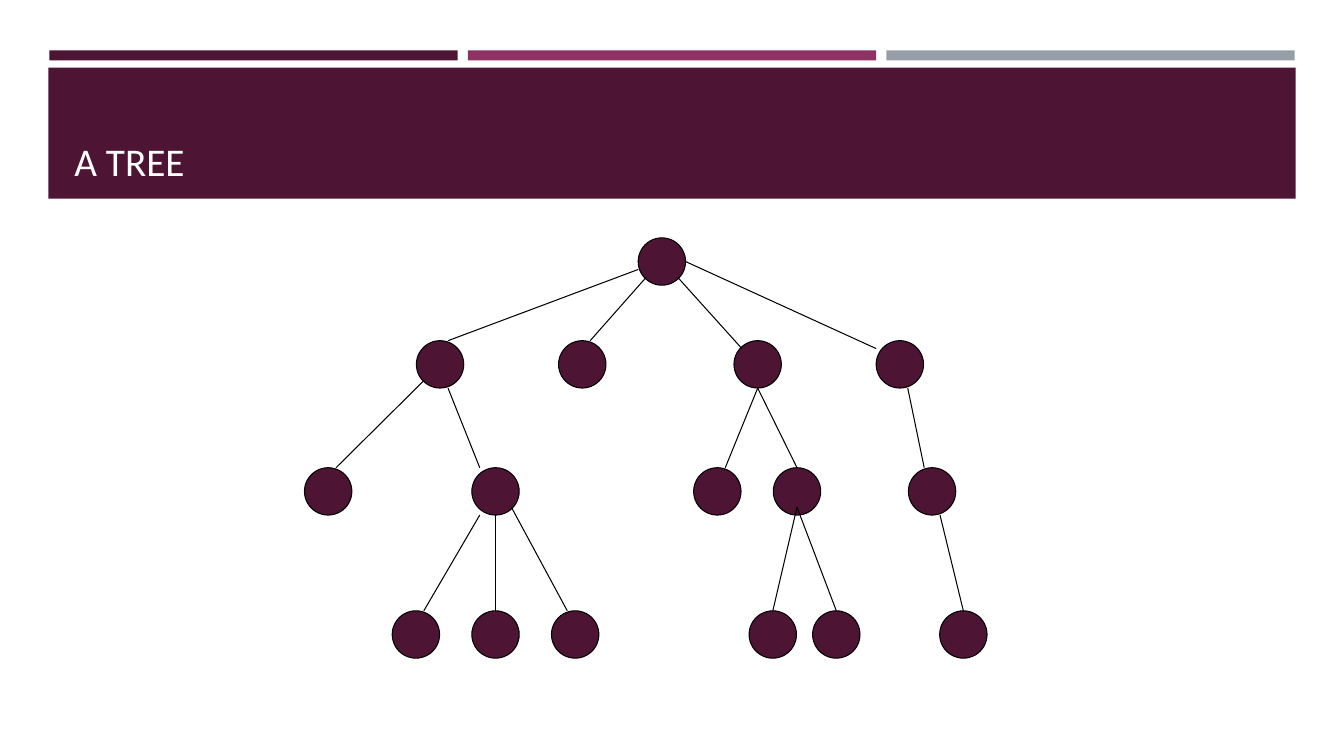
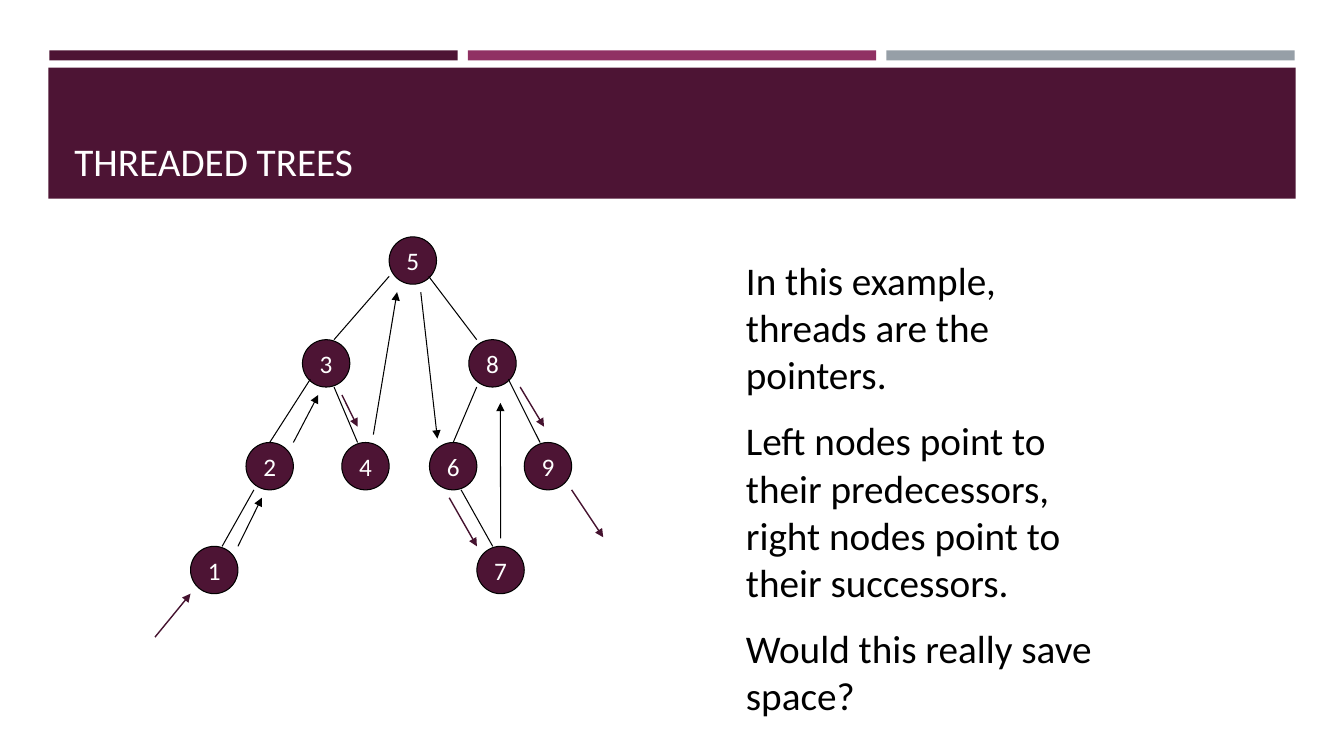
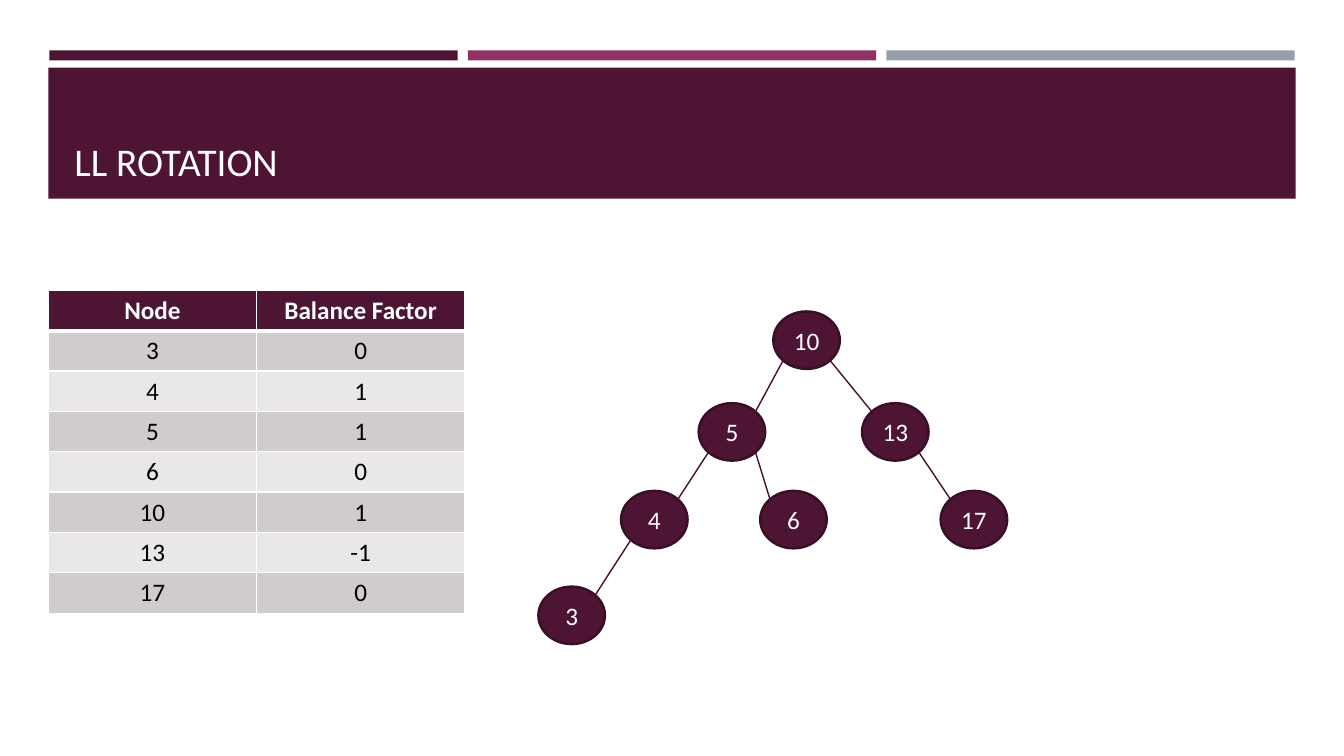
from lxml.etree import SubElement
from pptx import Presentation
from pptx.dml.color import RGBColor
from pptx.enum.shapes import MSO_CONNECTOR, MSO_SHAPE
from pptx.enum.text import MSO_ANCHOR, PP_ALIGN
from pptx.oxml.ns import qn
from pptx.util import Emu, Pt

PLUM, MAGENTA, GREY = "4D1434", "903163", "969FA7"
DARK_PLUM, DEEP_PLUM = "45122F", "390F26"
BLACK, WHITE = "000000", "FFFFFF"
ROW_FILLS = ("D0CCCE", "E9E7E8")
FONT = "Calibri"

EMU_PER_PX = 9144
NODE_UNITS = 6

THIN = {"color": BLACK, "width": 0.75}
THREAD = {"color": BLACK, "width": 0.75, "arrow": True}
POINTER = {"color": DARK_PLUM, "width": 1, "arrow": True}
BRANCH = {"color": DARK_PLUM, "width": 1}

UPPER_LEFT, UPPER_RIGHT = (0.88, 0.88), (5.12, 0.88)
LOWER_LEFT, LOWER_RIGHT = (0.88, 5.12), (5.12, 5.12)

PLAIN_TREE = {
    "box": (302, 236), "node_size": (47, 47), "outline": (BLACK, 0.75), "labelled": False,
    "nodes": {
        "root": (331, 0),
        "A": (111, 102), "B": (252, 102), "C": (426, 102), "D": (567, 102),
        "E": (0, 228), "F": (166, 228), "G": (386, 228), "H": (465, 228), "I": (599, 228),
        "J": (87, 370), "K": (166, 370), "L": (245, 370),
        "M": (441, 370), "N": (504, 370), "O": (630, 370),
    },
    "edges": [(THIN, [
        ("root", (0, 4), "A", (4, 0)), ("root", (1, 5), "B", (4, 0)),
        ("root", (5, 5), "C", (1, 1)), ("root", (6, 3), "D", (0, 1)),
        ("A", (1, 5), "E", (4, 0)), ("A", (4, 6), "F", (1, 0)),
        ("F", (1, 6), "J", (4, 0)), ("F", (3, 6), "K", (3, 0)), ("F", (5, 5), "L", (2, 0)),
        ("C", (3, 6), "G", (4, 0)), ("C", (3, 6), "H", (3, 0)),
        ("H", (3, 5), "M", (3, 0)), ("H", (3, 5), "N", (3, 0)),
        ("D", (4, 6), "I", (2, 0)), ("I", (4, 6), "O", (3, 0)),
    ])],
}

THREADED_TREE = {
    "box": (189, 235), "node_size": (47, 47), "outline": (BLACK, 0.75), "labelled": True,
    "nodes": {
        "5": (197, 0), "3": (111, 102), "8": (276, 102),
        "2": (55, 204), "4": (150, 204), "6": (237, 204), "9": (331, 204),
        "1": (0, 307), "7": (284, 307),
    },
    "edges": [
        (THIN, [
            ("5", (0, 5), "3", (4, 0)), ("5", (5, 5), "8", (1, 0)),
            ("3", (1, 5), "2", (3, 0)), ("3", (4, 6), "4", (2, 0)),
            ("8", (1, 6), "6", (3, 0)), ("8", (5, 5), "9", (2, 0)),
            ("2", (1, 6), "1", (4, 0)), ("6", (4, 6), "7", (2, 0)),
        ]),
        (THREAD, [
            ("1", (6, 0), "2", (2, 7)), ("2", (6, 0), "3", (2, 7)),
            ("4", (4, -1), "5", (1, 7)), ("5", (4, 7), "6", (1, -0.5)),
            ("7", (3, -1), "8", (4, 8)),
        ]),
        (POINTER, [
            ("3", (5, 7), "4", (2, -2)), ("6", (2.5, 7), "7", (0, 0)),
            ("8", (6.5, 6), "9", (2.5, -2)), ("9", (6, 6), "9", (10, 12)),
            ("1", (-4.5, 11.5), "1", (0, 6)),
        ]),
    ],
}

ROTATION_TREE = {
    "box": (534, 309), "node_size": (66, 57), "outline": (DEEP_PLUM, 1.75), "labelled": True,
    "nodes": {
        "10": (233, 0), "5": (159, 91), "13": (321, 91),
        "4": (82, 178), "6": (220, 178), "17": (399, 178), "3": (0, 273),
    },
    "edges": [(BRANCH, [
        ("10", LOWER_LEFT, "5", UPPER_RIGHT), ("10", LOWER_RIGHT, "13", UPPER_LEFT),
        ("5", LOWER_LEFT, "4", UPPER_RIGHT), ("5", LOWER_RIGHT, "6", UPPER_LEFT),
        ("13", LOWER_RIGHT, "17", UPPER_LEFT), ("4", LOWER_LEFT, "3", UPPER_RIGHT),
    ])],
}

THREAD_NOTES = [
    "In this example, threads are the pointers.",
    "Left nodes point to their predecessors, right nodes point to their successors.",
    "Would this really save space?",
]

BALANCE_ROWS = [
    ("Node", "Balance Factor"), ("3", "0"), ("4", "1"), ("5", "1"),
    ("6", "0"), ("10", "1"), ("13", "-1"), ("17", "0"),
]


def px(length):
    """Turn px into EMU."""
    return Emu(round(length * EMU_PER_PX))


def rgb(color):
    """Turn a hex string into a colour."""
    return RGBColor.from_string(color)


def write(paragraph, text, color, size, bold=False):
    """Add one run of formatted text to a paragraph."""
    run = paragraph.add_run()
    run.text = text
    for name, value in {"name": FONT, "size": Pt(size), "bold": bold}.items():
        setattr(run.font, name, value)
    run.font.color.rgb = rgb(color)


def add_filled_shape(slide, kind, box, fill, outline=None):
    """Add a preset shape with a flat fill and an optional outline."""
    shape = slide.shapes.add_shape(kind, *map(px, box))
    shape.shadow.inherit = False
    shape.fill.solid()
    shape.fill.fore_color.rgb = rgb(fill)
    if outline:
        color, width = outline
        shape.line.color.rgb = rgb(color)
        shape.line.width = Pt(width)
    else:
        shape.line.fill.background()
    return shape


def add_text_frame(slide, box, **settings):
    """Add a wrapping text box and return its text frame."""
    frame = slide.shapes.add_textbox(*map(px, box)).text_frame
    for name, value in {"word_wrap": True, **settings}.items():
        setattr(frame, name, value)
    return frame


def add_header(slide, box, title):
    """Draw the three accent bars, the title band and the title."""
    left, top, width, height = box
    for index, color in enumerate((PLUM, MAGENTA, GREY)):
        bar = (left + 1 + index * 415, top, 405, 10)
        add_filled_shape(slide, MSO_SHAPE.RECTANGLE, bar, color)
    add_filled_shape(slide, MSO_SHAPE.RECTANGLE, (left, top + 17, width, height - 17), PLUM)
    frame = add_text_frame(slide, (left + 16, top + 27, width - 31, 111),
                           vertical_anchor=MSO_ANCHOR.BOTTOM)
    write(frame.paragraphs[0], title, WHITE, 28)


def add_edge(slide, start, end, color, width, arrow=False):
    """Draw a straight line, with an arrowhead at its end if asked."""
    connector = slide.shapes.add_connector(MSO_CONNECTOR.STRAIGHT, *map(px, start + end))
    connector.line.color.rgb = rgb(color)
    connector.line.width = Pt(width)
    properties = connector.element.find(qn("p:spPr"))
    if arrow:
        SubElement(properties.find(qn("a:ln")), qn("a:tailEnd"), type="triangle")
    SubElement(properties, qn("a:effectLst"))


def add_tree(slide, box, node_size, outline, labelled, nodes, edges):
    """Draw nodes from the box corner, then edges anchored in sixths of a node."""
    left, top = box
    width, height = node_size

    def anchor(node, offset):
        """Locate a point measured from the corner of a node."""
        x, y = nodes[node]
        return (left + x + offset[0] * width / NODE_UNITS,
                top + y + offset[1] * height / NODE_UNITS)

    for label, (x, y) in nodes.items():
        shape = add_filled_shape(slide, MSO_SHAPE.OVAL, (left + x, top + y, width, height),
                                 PLUM, outline)
        if labelled:
            frame = shape.text_frame
            frame.word_wrap = False
            frame.vertical_anchor = MSO_ANCHOR.MIDDLE
            frame.paragraphs[0].alignment = PP_ALIGN.CENTER
            write(frame.paragraphs[0], label, WHITE, 18)
    for style, links in edges:
        for source, start, target, end in links:
            add_edge(slide, anchor(source, start), anchor(target, end), **style)


def add_notes_column(slide, box, notes):
    """Write the explanatory paragraphs beside a tree."""
    frame = add_text_frame(slide, box, margin_right=px(24))
    for index, note in enumerate(notes):
        paragraph = frame.add_paragraph() if index else frame.paragraphs[0]
        paragraph.space_before = Pt(14 if index else 0)
        write(paragraph, note, BLACK, 28)


def add_cell_borders(cell, bottom_width):
    """Give a cell white borders, with its own width at the bottom."""
    properties = cell._tc.get_or_add_tcPr()
    for side, width in (("L", 1), ("R", 1), ("T", 1), ("B", bottom_width)):
        line = SubElement(properties, qn(f"a:ln{side}"), w=str(Pt(width)))
        SubElement(SubElement(line, qn("a:solidFill")), qn("a:srgbClr"), val=WHITE)


def add_balance_table(slide, box, rows):
    """Draw the table of balance factors with a header and banded rows."""
    table = slide.shapes.add_table(len(rows), len(rows[0]), *map(px, box)).table
    for row_index, values in enumerate(rows):
        header = row_index == 0
        fill = PLUM if header else ROW_FILLS[(row_index - 1) % 2]
        for column_index, value in enumerate(values):
            cell = table.cell(row_index, column_index)
            add_cell_borders(cell, 3 if header else 1)
            cell.fill.solid()
            cell.fill.fore_color.rgb = rgb(fill)
            paragraph = cell.text_frame.paragraphs[0]
            paragraph.alignment = PP_ALIGN.CENTER
            write(paragraph, value, WHITE if header else BLACK, 18, bold=header)


def add_slide(presentation, title):
    """Add a blank slide with the shared header."""
    slide = presentation.slides.add_slide(presentation.slide_layouts[6])
    add_header(slide, (48, 50, 1237, 147), title)
    return slide


def main():
    """Build the three slides and save them."""
    presentation = Presentation()
    presentation.slide_width, presentation.slide_height = px(1333), px(750)

    add_tree(add_slide(presentation, "A TREE"), **PLAIN_TREE)

    threaded = add_slide(presentation, "THREADED TREES")
    add_tree(threaded, **THREADED_TREE)
    add_notes_column(threaded, (730, 249, 394, 434), THREAD_NOTES)

    rotation = add_slide(presentation, "LL ROTATION")
    add_tree(rotation, **ROTATION_TREE)
    add_balance_table(rotation, (48, 288, 413, 320), BALANCE_ROWS)

    presentation.save("out.pptx")


if __name__ == "__main__":
    main()
